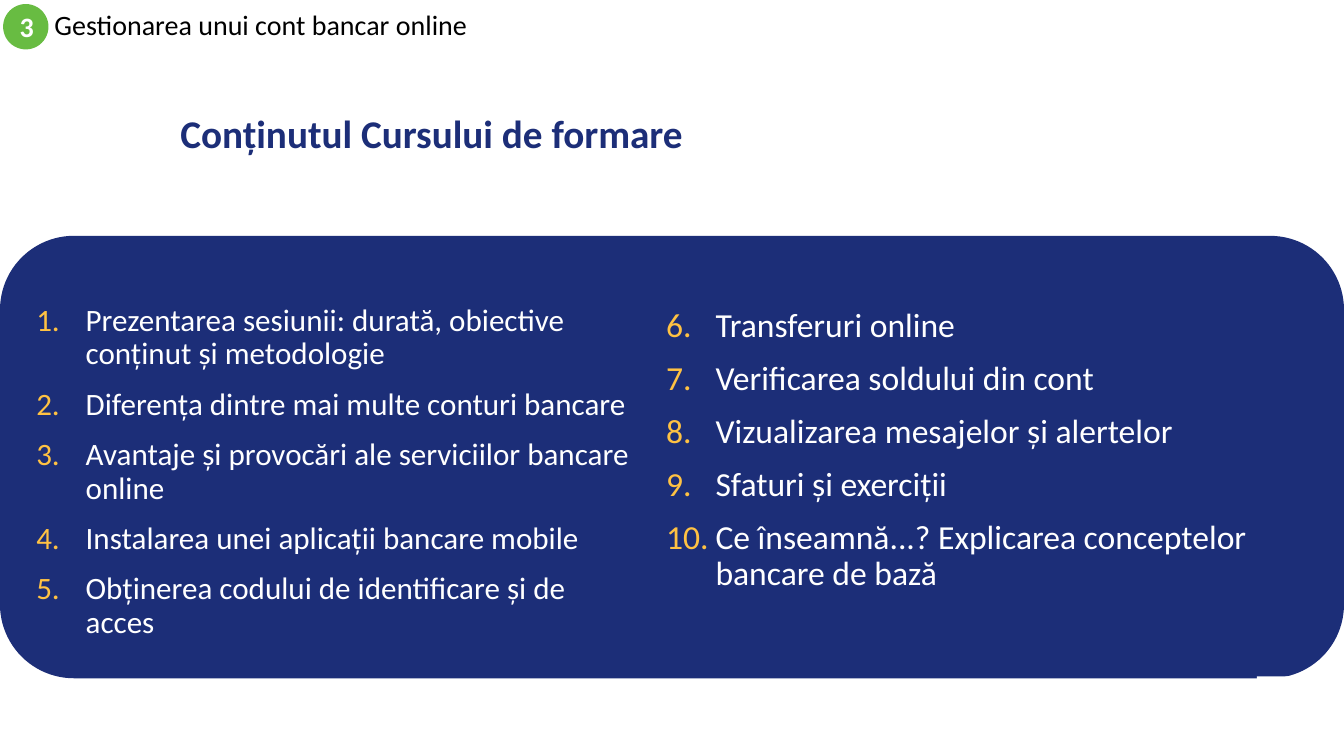
from lxml import etree
from pptx import Presentation
from pptx.dml.color import RGBColor
from pptx.enum.shapes import MSO_SHAPE
from pptx.enum.text import MSO_ANCHOR, MSO_AUTO_SIZE, PP_ALIGN
from pptx.oxml.ns import qn
from pptx.util import Pt

NAVY = RGBColor(0x1C, 0x2E, 0x78)
AMBER = RGBColor(0xFF, 0xC2, 0x43)
GREEN = RGBColor(0x68, 0xBC, 0x42)
WHITE = RGBColor(0xFF, 0xFF, 0xFF)
BLACK = RGBColor(0, 0, 0)
ROUNDED, OVAL, RECTANGLE = MSO_SHAPE.ROUNDED_RECTANGLE, MSO_SHAPE.OVAL, MSO_SHAPE.RECTANGLE
TOP, MIDDLE = MSO_ANCHOR.TOP, MSO_ANCHOR.MIDDLE
LEFT, CENTER = PP_ALIGN.LEFT, PP_ALIGN.CENTER
NO_FIT = MSO_AUTO_SIZE.NONE
PAGE_WIDTH, PAGE_HEIGHT = 960, 540

FIRST_TOPICS = [
    "Prezentarea sesiunii: durată, obiective conținut și metodologie",
    "Diferența dintre mai multe conturi bancare",
    "Avantaje și provocări ale serviciilor bancare online",
    "Instalarea unei aplicații bancare mobile",
    "Obținerea codului de identificare și de acces",
]
LAST_TOPICS = [
    "Transferuri online",
    "Verificarea soldului din cont",
    "Vizualizarea mesajelor și alertelor",
    "Sfaturi și exerciții",
    "Ce înseamnă...? Explicarea conceptelor bancare de bază",
]


def set_attributes(target, values):
    for name, value in values.items():
        setattr(target, name, value)


def place(shape, box):
    names = ("left", "top", "width", "height")
    set_attributes(shape, dict(zip(names, map(Pt, box))))


def add_block(page, kind, box, color):
    shape = page.shapes.add_shape(kind, *map(Pt, box))
    shape.shadow.inherit = False
    shape.fill.solid()
    shape.fill.fore_color.rgb = color
    shape.line.fill.background()
    return shape


def write_lines(shape, lines, size, color, bold=False, anchor=MIDDLE, align=LEFT, spacing=0.9):
    frame = shape.text_frame
    set_attributes(frame, {"word_wrap": True, "auto_size": NO_FIT, "vertical_anchor": anchor})
    frame.text = "\n".join(lines)
    for index, para in enumerate(frame.paragraphs):
        set_attributes(para, {"alignment": align, "line_spacing": spacing,
                              "space_before": Pt(12 if index else 0), "space_after": Pt(0)})
        for span in para.runs:
            set_attributes(span.font, {"name": "Calibri", "size": Pt(size), "bold": bold})
            span.font.color.rgb = color


def write_numbered(shape, topics, size, start=1):
    write_lines(shape, topics, size, WHITE, anchor=TOP)
    for para in shape.text_frame.paragraphs:
        properties = para._p.get_or_add_pPr()
        properties.set("marL", str(Pt(36)))
        properties.set("indent", str(-Pt(35.3)))
        bullet_color = etree.SubElement(properties, qn("a:buClr"))
        etree.SubElement(bullet_color, qn("a:srgbClr"), val=str(AMBER))
        etree.SubElement(properties, qn("a:buFont"), typeface="+mj-lt")
        etree.SubElement(properties, qn("a:buAutoNum"), type="arabicPeriod", startAt=str(start))


def build_header(page, box):
    left, top, width, height = box
    badge = add_block(page, OVAL, (left, top, height, height), GREEN)
    write_lines(badge, ["3"], 20, WHITE, bold=True, align=CENTER, spacing=1)
    label_left = left + height - 2.8
    label = page.shapes.add_textbox(*map(Pt, (label_left, top, width, height)))
    write_lines(label, ["Gestionarea unui cont bancar online"], 20, BLACK)


def build_title(page, box):
    title = page.shapes.title
    place(title, box)
    write_lines(title, ["Conținutul Cursului de formare"], 28, NAVY, bold=True)


def build_topics(page, box):
    left, top, width, height = box
    panel = add_block(page, ROUNDED, box, NAVY)
    panel.adjustments[0] = 0.167
    page.shapes.title.element.addprevious(panel.element)
    body = page.placeholders[1]
    place(body, (left + 18, top + 45.4, 439.2, 261.4))
    write_numbered(body, FIRST_TOPICS, 22.2)
    column_left = left + 468
    column = page.shapes.add_textbox(
        *map(Pt, (column_left, top + 48.2, left + width - column_left, 225.4)))
    write_numbered(column, LAST_TOPICS, 24, start=len(FIRST_TOPICS) + 1)


def build_corner(page, box):
    add_block(page, RECTANGLE, box, WHITE)


def main():
    deck = Presentation()
    set_attributes(deck, {"slide_width": Pt(PAGE_WIDTH), "slide_height": Pt(PAGE_HEIGHT)})
    page = deck.slides.add_slide(deck.slide_layouts[1])
    build_title(page, (121.7, 72.7, 597.6, 49))
    build_topics(page, (0, 168.5, PAGE_WIDTH, 316))
    build_header(page, (2.2, 2.9, 576, 32.4))
    build_corner(page, (897.8, 483.1, PAGE_WIDTH - 897.8, PAGE_HEIGHT - 483.1))
    deck.save("out.pptx")


if __name__ == "__main__":
    main()
